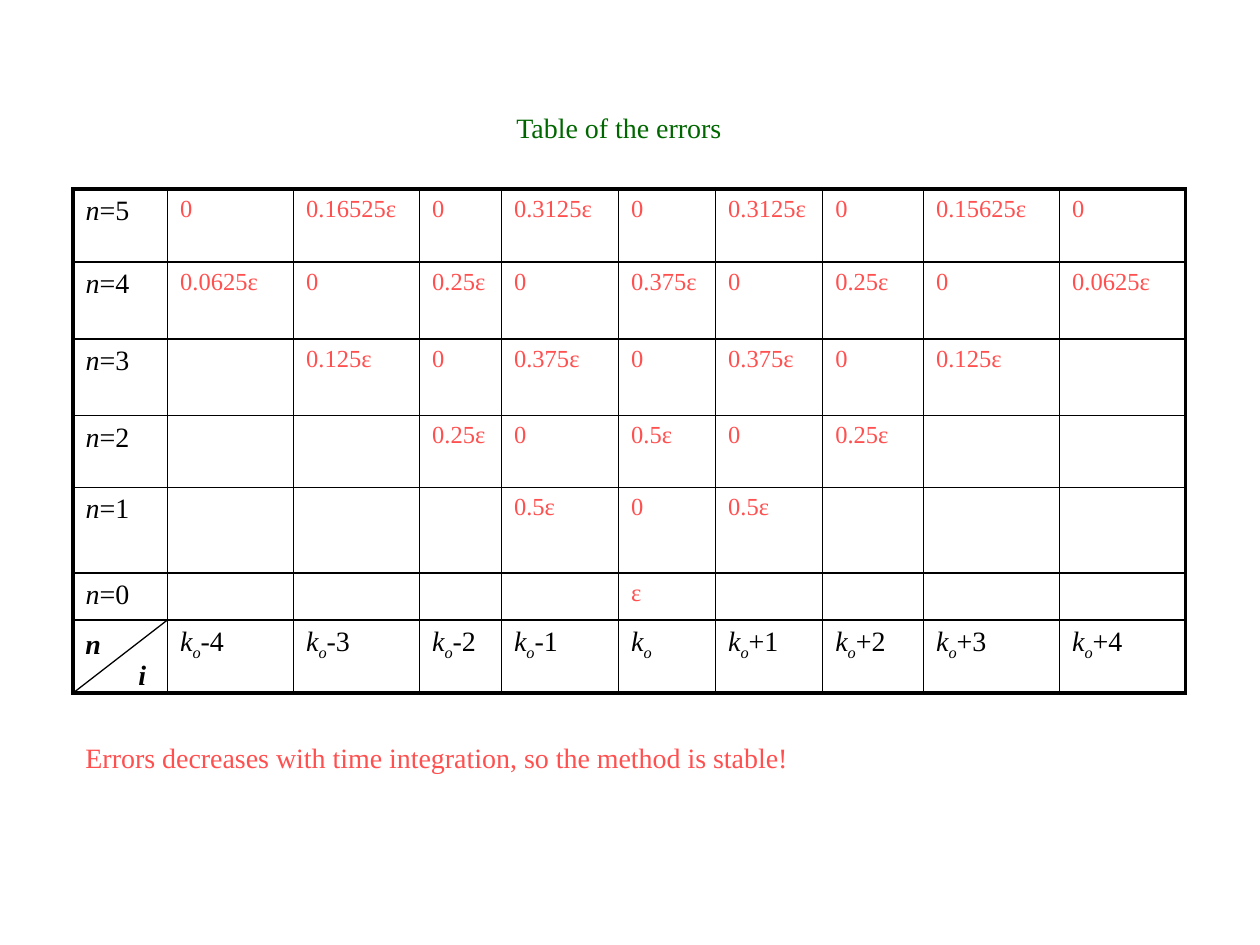
from lxml import etree
from pptx import Presentation
from pptx import util as u
from pptx.dml.color import RGBColor
from pptx.enum import shapes, text
from pptx.oxml import ns

BLACK = RGBColor(0x00, 0x00, 0x00)
GREEN = RGBColor(0x00, 0x66, 0x00)
CORAL = RGBColor(0xFF, 0x50, 0x50)
FONT = "Times New Roman"
LABEL_SIZE, ERROR_SIZE = 16, 14
THIN, THICK = 1, 2.25

# Grid of the table, in inches
LEFT, TOP = 0.58, 1.5
COLUMNS = [0.75, 1, 1, 0.65, 0.93, 0.77, 0.85, 0.8, 1.08, 1]
ROWS = [0.58, 0.61, 0.61, 0.57, 0.68, 0.37, 0.58]
POINTS = len(COLUMNS) - 1
CORNER_TOP = TOP + sum(ROWS[:-1])

# Errors per time step, from n=5 down to n=0, centred on the point k_o
ERRORS = [
    ["0", "0.16525ε", "0", "0.3125ε", "0", "0.3125ε", "0", "0.15625ε", "0"],
    ["0.0625ε", "0", "0.25ε", "0", "0.375ε", "0", "0.25ε", "0", "0.0625ε"],
    ["0.125ε", "0", "0.375ε", "0", "0.375ε", "0", "0.125ε"],
    ["0.25ε", "0", "0.5ε", "0", "0.25ε"],
    ["0.5ε", "0", "0.5ε"],
    ["ε"],
]


def add_run(paragraph, wording, size=LABEL_SIZE, color=BLACK, italic=False, bold=False):
    run = paragraph.add_run()
    run.text = wording
    font = run.font
    font.name, font.size = FONT, u.Pt(size)
    font.italic, font.bold = italic, bold
    font.color.rgb = color
    return run


def add_label(slide, wording, left, top, width, wrap=False, **style):
    box = slide.shapes.add_textbox(u.Inches(left), u.Inches(top), u.Inches(width), u.Inches(0.37))
    box.text_frame.word_wrap = wrap
    box.text_frame.auto_size = text.MSO_AUTO_SIZE.SHAPE_TO_FIT_TEXT
    add_run(box.text_frame.paragraphs[0], wording, **style)


def set_borders(cell, widths):
    properties = cell._tc.get_or_add_tcPr()
    for position, (side, width) in enumerate(widths.items()):
        line = etree.Element(ns.qn(f"a:ln{side}"), w=str(u.Pt(width)))
        fill = etree.SubElement(line, ns.qn("a:solidFill"))
        etree.SubElement(fill, ns.qn("a:srgbClr"), val=str(BLACK))
        properties.insert(position, line)


def write_point(paragraph, offset):
    """Grid point k_o, followed by its offset."""
    add_run(paragraph, "k", italic=True)
    subscript = add_run(paragraph, "o", italic=True)
    subscript.font._element.set("baseline", "-25000")
    if offset:
        add_run(paragraph, f"{offset:+d}")


def write_cell(paragraph, row, column):
    last_row = len(ROWS) - 1
    if row == last_row and column:
        write_point(paragraph, column - 1 - POINTS // 2)
    elif row < last_row and not column:
        add_run(paragraph, "n", italic=True)
        add_run(paragraph, f"={len(ERRORS) - 1 - row}")
    elif row < last_row:
        errors = ERRORS[row]
        index = column - 1 - (POINTS - len(errors)) // 2
        if 0 <= index < len(errors):
            add_run(paragraph, errors[index], ERROR_SIZE, CORAL)
    # Keeps empty cells from stretching their row
    if not paragraph.runs:
        paragraph._p.get_or_add_endParaRPr().set("sz", str(ERROR_SIZE * 100))


def add_error_table(slide):
    table = slide.shapes.add_table(
        len(ROWS), len(COLUMNS), u.Inches(LEFT), u.Inches(TOP),
        u.Inches(sum(COLUMNS)), u.Inches(sum(ROWS))).table
    table.first_row = table.horz_banding = False
    for column, width in zip(table.columns, COLUMNS):
        column.width = u.Inches(width)
    for row, height in zip(table.rows, ROWS):
        row.height = u.Inches(height)
    for r in range(len(ROWS)):
        for c in range(len(COLUMNS)):
            cell = table.cell(r, c)
            cell.fill.background()
            set_borders(cell, {
                "L": THICK if c == 0 else THIN,
                "R": THICK if c == len(COLUMNS) - 1 else THIN,
                "T": THICK if r == 0 else THIN,
                "B": THICK if r == len(ROWS) - 1 else THIN,
            })
            write_cell(cell.text_frame.paragraphs[0], r, c)


def add_corner(slide):
    """Diagonal that splits the corner cell between n and i."""
    diagonal = slide.shapes.add_connector(
        shapes.MSO_CONNECTOR.STRAIGHT,
        u.Inches(LEFT + COLUMNS[0]), u.Inches(CORNER_TOP),
        u.Inches(LEFT), u.Inches(CORNER_TOP + ROWS[-1]))
    diagonal.line.color.rgb = BLACK
    diagonal.line.width = u.Pt(0.75)
    etree.SubElement(diagonal._element.spPr, ns.qn("a:effectLst"))
    add_label(slide, "i", 1, CORNER_TOP + 0.25, 0.26, italic=True, bold=True)
    add_label(slide, "n", LEFT, CORNER_TOP, 0.33, wrap=True, italic=True, bold=True)


def main():
    deck = Presentation()
    deck.slide_width, deck.slide_height = u.Inches(10), u.Inches(7.5)
    slide = deck.slides.add_slide(deck.slide_layouts[6])

    # Table with its split corner
    add_error_table(slide)
    add_corner(slide)

    # Heading and conclusion
    add_label(slide, "Table of the errors", 4, 0.83, 1.85, color=GREEN)
    add_label(slide, "Errors decreases with time integration, so the method is stable!",
              LEFT, 5.83, 5.81, color=CORAL)
    deck.save("out.pptx")


if __name__ == "__main__":
    main()
